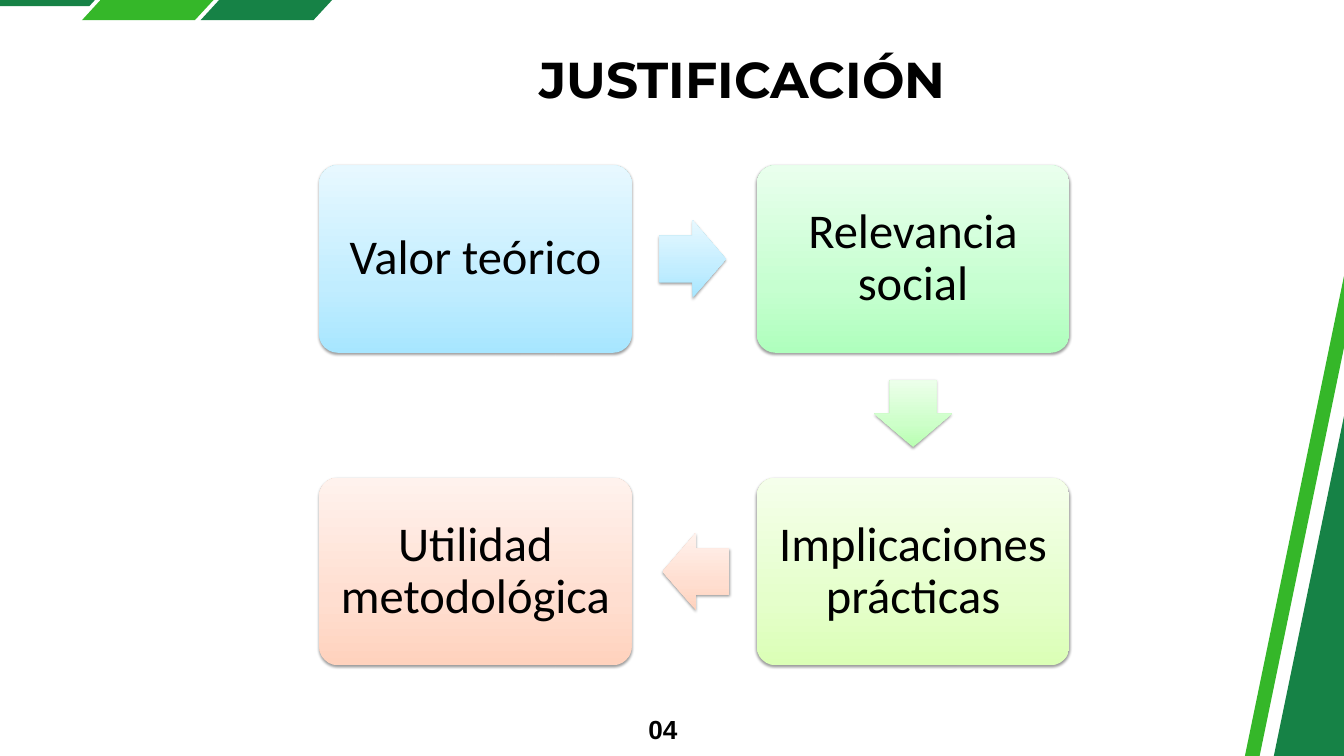
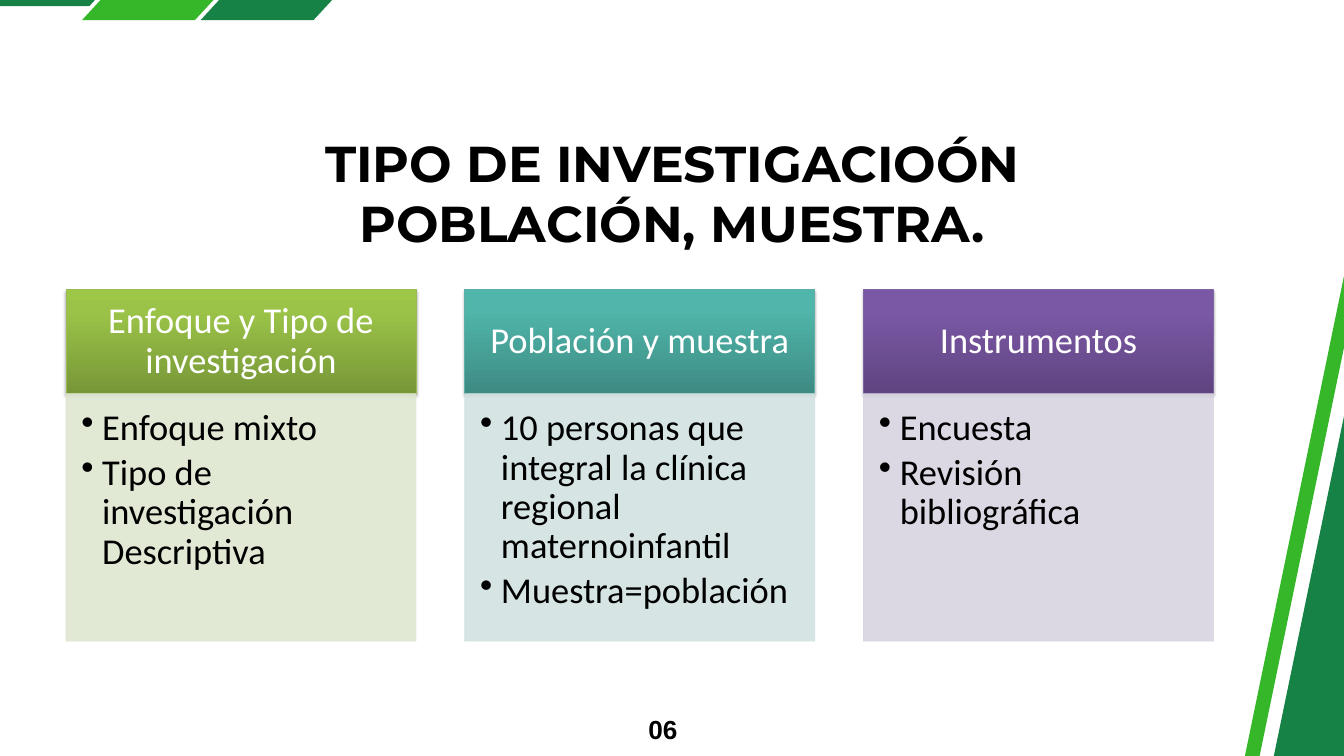
from copy import deepcopy

from lxml import etree
from pptx import Presentation
from pptx.dml.color import RGBColor
from pptx.enum.shapes import MSO_SHAPE
from pptx.enum.text import MSO_ANCHOR, MSO_AUTO_SIZE, PP_ALIGN
from pptx.oxml.ns import qn
from pptx.util import Inches, Pt

RECT, ROUND = MSO_SHAPE.RECTANGLE, MSO_SHAPE.ROUNDED_RECTANGLE
ARROW = MSO_SHAPE.RIGHT_ARROW
TOP, MIDDLE = MSO_ANCHOR.TOP, MSO_ANCHOR.MIDDLE
LEFT, CENTER, RIGHT = PP_ALIGN.LEFT, PP_ALIGN.CENTER, PP_ALIGN.RIGHT
NO_FIT = MSO_AUTO_SIZE.NONE

# The slide is a grid of 80 columns by 45 rows
UNIT = Inches(0.25)
COLS, ROWS = 80, 45

BLACK = RGBColor(0, 0, 0)
WHITE = RGBColor(255, 255, 255)
DARK = RGBColor(0x16, 0x82, 0x46)
LIGHT = RGBColor(0x35, 0xB7, 0x29)


def shades(*codes):
    return [RGBColor.from_string(code) for code in codes]


# Gradients run from the bottom up
BLUE = shades("A7E6FF", "C1EDFF", "E7F8FF")
MINT = shades("AFFFBD", "C6FFD0", "E9FFED")
GREEN = shades("B9FFB2", "CDFFC9", "ECFFEA")
LIME = shades("DBFFB6", "E5FFCB", "F5FFEB")
PEACH = shades("FFD2BD", "FFDED0", "FFF2ED")
OLIVE = shades("779737", "9BC348", "9DC746")
TEAL = shades("3D8B83", "50B5AA", "4EB8AC")
PURPLE = shades("5F4480", "7B58A6", "7C57A8")
EDGES = shades("9BBB59", "5EAFA6", "8064A2")
PALES = shades("DEE7D1", "D2E3E2", "D8D3E0")

CARD_W, CARD_H = 18.6, 11.16
PALE_ALPHA = 90


def units(*values):
    return [round(v * UNIT) for v in values]


# Text and fill helpers
def set_text(shape, lines, font, size, color, align=CENTER, anchor=TOP,
             insets=(0, 0, 0, 0), bold=False, spacing=None, bullet=False):
    frame = shape.text_frame
    frame.text = "\n".join(lines)
    frame.word_wrap = True
    frame.auto_size = NO_FIT
    frame.vertical_anchor = anchor
    (frame.margin_left, frame.margin_top,
     frame.margin_right, frame.margin_bottom) = map(Inches, insets)
    for para in frame.paragraphs:
        if bullet:
            add_bullet(para)
        para.alignment = align
        para.line_spacing = spacing
        for run in para.runs:
            run.font.name, run.font.size = font, Pt(size)
            run.font.bold = bold
            run.font.color.rgb = color


def add_bullet(para):
    props = para._p.get_or_add_pPr()
    indent = Inches(0.31)
    props.set("marL", str(indent))
    props.set("indent", str(-indent))
    etree.SubElement(props, qn("a:buChar")).set("char", "•")
    para.space_after = Pt(6)


def set_alpha(color, percent):
    etree.SubElement(color, qn("a:alpha")).set("val", str(percent * 1000))


def fill_grad(shape, colors, middle):
    shape.fill.gradient()
    shape.fill.gradient_angle = 90
    grad = shape.element.spPr.find(qn("a:gradFill"))
    grad.set("rotWithShape", "0")
    stops = grad.find(qn("a:gsLst"))
    stops.insert(1, deepcopy(stops[0]))
    for stop, color, place in zip(shape.fill.gradient_stops, colors,
                                  (0, middle, 1)):
        stop.color.rgb = color
        stop.position = place


def add_shadow(shape, alpha, dist):
    effects = shape.element.spPr.find(qn("a:effectLst"))
    shadow = etree.SubElement(effects, qn("a:outerShdw"), {
        "blurRad": str(Pt(3.1)), "dist": str(Pt(dist)),
        "dir": "5400000", "rotWithShape": "0"})
    color = etree.SubElement(shadow, qn("a:srgbClr"), val="000000")
    set_alpha(color, alpha)


def add_box(slide, kind, x, y, w, h):
    shape = slide.shapes.add_shape(kind, *units(x, y, w, h))
    shape.shadow.inherit = False
    shape.line.fill.background()
    return shape


def set_line(shape, color):
    shape.line.color.rgb = color
    shape.line.width = Pt(0.75)


# Shared frame
def add_band(slide, layout, points, color):
    points = [units(*point) for point in points]
    pen = slide.shapes.build_freeform(*points[0])
    pen.add_line_segments(points[1:])
    band = pen.convert_to_shape()
    band.shadow.inherit = False
    band.fill.solid()
    band.fill.fore_color.rgb = color
    band.line.fill.background()
    layout.shapes.element.append(band.element)


def add_bands(slide, layout):
    slant = [(9.76, -4.12), (16.52, -4.12), (11.6, 1.2), (4.88, 1.2)]
    add_band(slide, layout, [(-7.16, -3.32), (8.68, -3.32),
                             (5.32, 0.36), (-10.52, 0.36)], DARK)
    add_band(slide, layout, slant, LIGHT)
    add_band(slide, layout, [(x + 7.06, y) for x, y in slant], DARK)
    add_band(slide, layout, [(72.52, 61), (85.8, -3.32),
                             (104.04, 0.48), (90.76, 64.76)], DARK)
    add_band(slide, layout, [(70.8, 61), (84.08, -3.32),
                             (84.92, -3.12), (71.64, 61.16)], LIGHT)


def add_slide(deck, layout, title, place, number):
    slide = deck.slides.add_slide(layout)
    head = slide.shapes.title
    head.left, head.top, head.width, head.height = units(*place)
    set_text(head, [title], "Montserrat", 54, BLACK, bold=True)
    page = slide.shapes.add_textbox(*units(38.08, 42.16, 2.24, 2))
    set_text(page, [number], "Arial", 28, BLACK, RIGHT, bold=True,
             spacing=Pt(39.2))
    return slide


# Cycle of cards
def card_at(col, row):
    return 19 + 26.05 * col, 9.84 + 18.6 * row


def add_card(slide, text, spot, colors):
    card = add_box(slide, ROUND, *card_at(*spot), CARD_W, CARD_H)
    card.adjustments[0] = 0.1
    fill_grad(card, colors, 0.35)
    add_shadow(card, 38, 1.6)
    set_text(card, [text], "Calibri", 52, BLACK, anchor=MIDDLE,
             insets=[0.22] * 4, spacing=0.9)


def add_arrow(slide, start, end, angle, colors):
    w, h, back = 3.96, 4.6, 0.1
    (x1, y1), (x2, y2) = card_at(*start), card_at(*end)
    x = (x1 + x2 + CARD_W - w) / 2 - back * (end[0] - start[0])
    y = (y1 + y2 + CARD_H - h) / 2 - back * (end[1] - start[1])
    arrow = add_box(slide, ARROW, x, y, w, h)
    arrow.adjustments[0], arrow.adjustments[1] = 0.6, 0.5
    arrow.rotation = angle
    fill_grad(arrow, colors, 0.35)
    add_shadow(arrow, 38, 1.6)


# Columns with a header and a list
def add_column(slide, index, title, items, colors):
    x, w = 3.92 + 23.74 * index, 20.84
    head = add_box(slide, RECT, x, 17.24, w, 6.2)
    fill_grad(head, colors, 0.8)
    set_line(head, EDGES[index])
    add_shadow(head, 35, 1.8)
    set_text(head, [title], "Calibri", 39, WHITE, anchor=MIDDLE,
             insets=(0.3, 0.17, 0.3, 0.17), spacing=0.9)

    panel = add_box(slide, RECT, x, 23.44, w, 14.72)
    panel.fill.solid()
    panel.fill.fore_color.rgb = PALES[index]
    set_line(panel, PALES[index])
    for color in panel.element.spPr.iter(qn("a:srgbClr")):
        set_alpha(color, PALE_ALPHA)
    set_text(panel, items, "Calibri", 39, BLACK, LEFT,
             insets=(0.23, 0.23, 0.3, 0.34), spacing=0.9, bullet=True)


def main():
    deck = Presentation()
    deck.slide_width, deck.slide_height = units(COLS, ROWS)
    layout = deck.slide_layouts[5]

    # Justification
    slide = add_slide(deck, layout, "JUSTIFICACIÓN",
                      (29.12, 2.84, 30.12, 3.64), "04")
    add_bands(slide, layout)
    cards = [("Valor teórico", (0, 0), BLUE),
             ("Relevancia social", (1, 0), MINT),
             ("Implicaciones prácticas", (1, 1), LIME),
             ("Utilidad metodológica", (0, 1), PEACH)]
    for card in cards:
        add_card(slide, *card)
    spots = [spot for _, spot, _ in cards]
    for start, end, angle, colors in zip(spots, spots[1:], (0, 90, 180),
                                         (BLUE, GREEN, PEACH)):
        add_arrow(slide, start, end, angle, colors)

    # Type of research
    slide = add_slide(deck, layout,
                      "TIPO DE INVESTIGACIOÓN POBLACIÓN, MUESTRA.",
                      (9.68, 7.84, 60.68, 7.28), "06")
    columns = [
        ("Enfoque y Tipo de investigación",
         ["Enfoque mixto", "Tipo de investigación Descriptiva"], OLIVE),
        ("Población y muestra",
         ["10 personas que integral la clínica regional maternoinfantil",
          "Muestra=población"], TEAL),
        ("Instrumentos", ["Encuesta", "Revisión bibliográfica"], PURPLE)]
    for index, column in enumerate(columns):
        add_column(slide, index, *column)

    deck.save("out.pptx")


if __name__ == "__main__":
    main()
